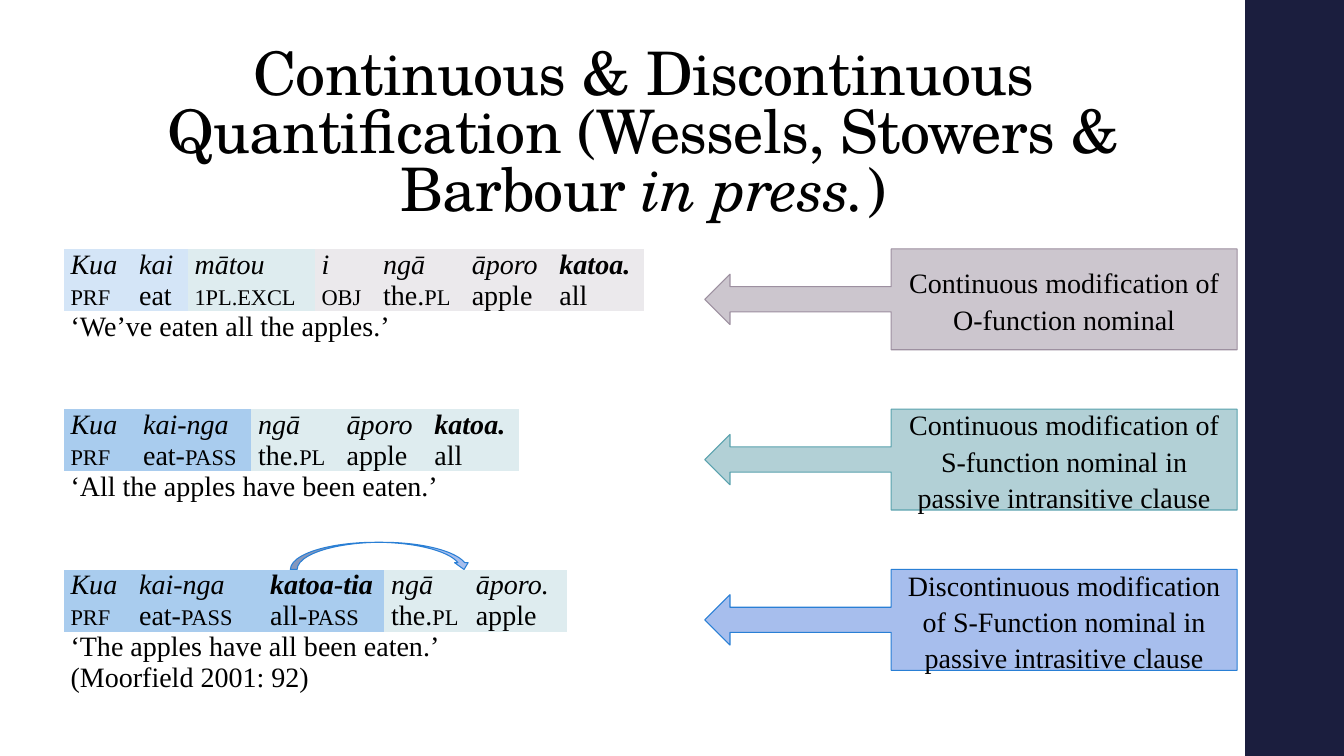
from pptx import Presentation
from pptx.dml.color import RGBColor
from pptx.enum.shapes import MSO_SHAPE
from pptx.enum.text import MSO_ANCHOR, MSO_AUTO_SIZE, PP_ALIGN
from pptx.util import Pt

RECTANGLE = MSO_SHAPE.RECTANGLE
CALLOUT = MSO_SHAPE.LEFT_ARROW_CALLOUT
CURVED_ARROW = MSO_SHAPE.CURVED_DOWN_ARROW
CENTER, JUSTIFY, LEFT = PP_ALIGN.CENTER, PP_ALIGN.JUSTIFY, PP_ALIGN.LEFT
MIDDLE, BOTTOM = MSO_ANCHOR.MIDDLE, MSO_ANCHOR.BOTTOM
NO_AUTOFIT = MSO_AUTO_SIZE.NONE

EMU_PER_PX = 9144
PLAIN_TABLE_STYLE = "{2D5ABB26-0587-4C30-8999-92F81FD0307C}"
BODY_FONT = {"name": "Times New Roman", "size": Pt(20)}
TITLE_FONT = {"name": "TeX Gyre Schola", "size": Pt(42.9)}
FIRST_TOP, EXAMPLE_STEP = 247, 159
ROW_HEIGHT = 30

PALE_BLUE, MID_BLUE = "D4E5F7", "A9CCEE"
PALE_TEAL, PALE_MAUVE = "DEECEF", "EBE9EC"

EXAMPLES = [
    {
        "widths": [68, 55, 126, 61, 88, 87, 91],
        "fills": [PALE_BLUE] * 2 + [PALE_TEAL] + [PALE_MAUVE] * 4,
        "words": ["Kua", "kai", "mātou", "i", "ngā", "āporo", "katoa."],
        "glosses": ["|prf", "eat", "|1pl.excl", "|obj", "the.|pl", "apple", "all"],
        "translation": "‘We’ve eaten all the apples.’",
        "label": "Continuous modification of O-function nominal",
        "label_colors": ("CCC6CE", "9D90A0"),
    },
    {
        "widths": [72, 114, 88, 87, 91],
        "fills": [MID_BLUE] * 2 + [PALE_TEAL] * 3,
        "words": ["Kua", "kai-nga", "ngā", "āporo", "katoa."],
        "glosses": ["|prf", "eat-|pass", "the.|pl", "apple", "all"],
        "translation": "‘All the apples have been eaten.’",
        "label": "Continuous modification of S-function nominal in passive intransitive clause",
        "label_colors": ("B2D0D6", "5AA2AE"),
    },
    {
        "widths": [68, 130, 120, 84, 97],
        "fills": [MID_BLUE] * 3 + [PALE_TEAL] * 2,
        "words": ["Kua", "kai-nga", "katoa-tia", "ngā", "āporo."],
        "glosses": ["|prf", "eat-|pass", "all-|pass", "the.|pl", "apple"],
        "translation": "‘The apples have all been eaten.’ (Moorfield 2001: 92)",
        "label": "Discontinuous modification of S-Function nominal in passive intrasitive clause",
        "label_colors": ("A7BEED", "297FD5"),
    },
]


def px(length):
    """Turn pixels into EMU."""
    return int(length * EMU_PER_PX)


def color(hex_code):
    """Turn a hex string into a colour."""
    return RGBColor.from_string(hex_code)


def add_run(paragraph, text, font, **formats):
    """Add a black run with the given font values."""
    run = paragraph.add_run()
    run.text = text
    run.font.color.rgb = color("000000")
    for name, value in {**font, **formats}.items():
        setattr(run.font, name, value)
    return run


def add_figure(slide, preset, box, fill, line=None):
    """Add a flat filled preset shape."""
    figure = slide.shapes.add_shape(preset, *map(px, box))
    figure.shadow.inherit = False
    figure.fill.solid()
    figure.fill.fore_color.rgb = color(fill)
    if line:
        figure.line.color.rgb = color(line)
        figure.line.width = Pt(0.75)
    else:
        figure.line.fill.background()
    return figure


def add_label(slide, top, text, colors):
    """Add a left-pointing callout that names the construction."""
    label = add_figure(slide, CALLOUT, (699, top, 528, 100), *colors)
    label.text_frame.word_wrap = True
    label.text_frame.vertical_anchor = MIDDLE
    paragraph = label.text_frame.paragraphs[0]
    paragraph.alignment = CENTER
    paragraph.line_spacing = 1.08
    add_run(paragraph, text, BODY_FONT)


def open_cell(cell, fill=None, alignment=JUSTIFY):
    """Format a cell and return its paragraph."""
    margins = {"margin_left": 7, "margin_right": 7, "margin_top": 0, "margin_bottom": 0}
    for name, value in margins.items():
        setattr(cell, name, px(value))
    if fill:
        cell.fill.solid()
        cell.fill.fore_color.rgb = color(fill)
    else:
        cell.fill.background()
    paragraph = cell.text_frame.paragraphs[0]
    paragraph.alignment = alignment
    return paragraph


def add_gloss(paragraph, gloss):
    """Write a gloss whose part after the bar is in small capitals."""
    stem, _, category = gloss.partition("|")
    if stem:
        add_run(paragraph, stem, BODY_FONT)
    if category:
        run = add_run(paragraph, category, BODY_FONT)
        run.font._element.set("cap", "small")


def add_example(slide, top, example):
    """Add an interlinear example of words, glosses and translation."""
    widths = example["widths"]
    frame = slide.shapes.add_table(
        3, len(widths), px(63), px(top), px(sum(widths)), px(3 * ROW_HEIGHT)
    )
    table = frame.table
    table.first_row = table.horz_banding = False
    table._tbl.tblPr[0].text = PLAIN_TABLE_STYLE
    for row in table.rows:
        row.height = px(ROW_HEIGHT)
    columns = zip(widths, example["fills"], example["words"], example["glosses"])
    for index, (width, fill, word, gloss) in enumerate(columns):
        table.columns[index].width = px(width)
        paragraph = open_cell(table.cell(0, index), fill)
        add_run(paragraph, word, BODY_FONT, italic=True, bold=word.startswith("katoa"))
        add_gloss(open_cell(table.cell(1, index), fill), gloss)
    translation = table.cell(2, 0)
    translation.merge(table.cell(2, len(widths) - 1))
    add_run(open_cell(translation, alignment=LEFT), example["translation"], BODY_FONT)


def set_title(slide):
    """Place and write the title."""
    title = slide.shapes.title
    title.left, title.top, title.width, title.height = map(px, (108, 25, 1060, 201))
    title.text_frame.word_wrap = True
    title.text_frame.auto_size = NO_AUTOFIT
    title.text_frame.vertical_anchor = BOTTOM
    paragraph = title.text_frame.paragraphs[0]
    paragraph.alignment = CENTER
    paragraph.line_spacing = 0.8
    opening = "Continuous & Discontinuous Quantification (Wessels, Stowers & Barbour "
    for text, italic in ((opening, False), ("in press.", True), (")", False)):
        run = add_run(paragraph, text, TITLE_FONT, italic=italic)
        run.font._element.set("spc", "-50")


def main():
    """Build the slide and save it."""
    deck = Presentation()
    deck.slide_width, deck.slide_height = px(1333), px(750)
    slide = deck.slides.add_slide(deck.slide_layouts[5])
    add_figure(slide, RECTANGLE, (1235, 0, 98, 750), "1B1E3E")
    set_title(slide)
    for index, example in enumerate(EXAMPLES):
        top = FIRST_TOP + index * EXAMPLE_STEP
        add_example(slide, top, example)
        add_label(slide, top, example["label"], example["label_colors"])
    add_figure(slide, CURVED_ARROW, (288, 538, 179, 27), "A7BEED", "297FD5")
    deck.save("out.pptx")


if __name__ == "__main__":
    main()
